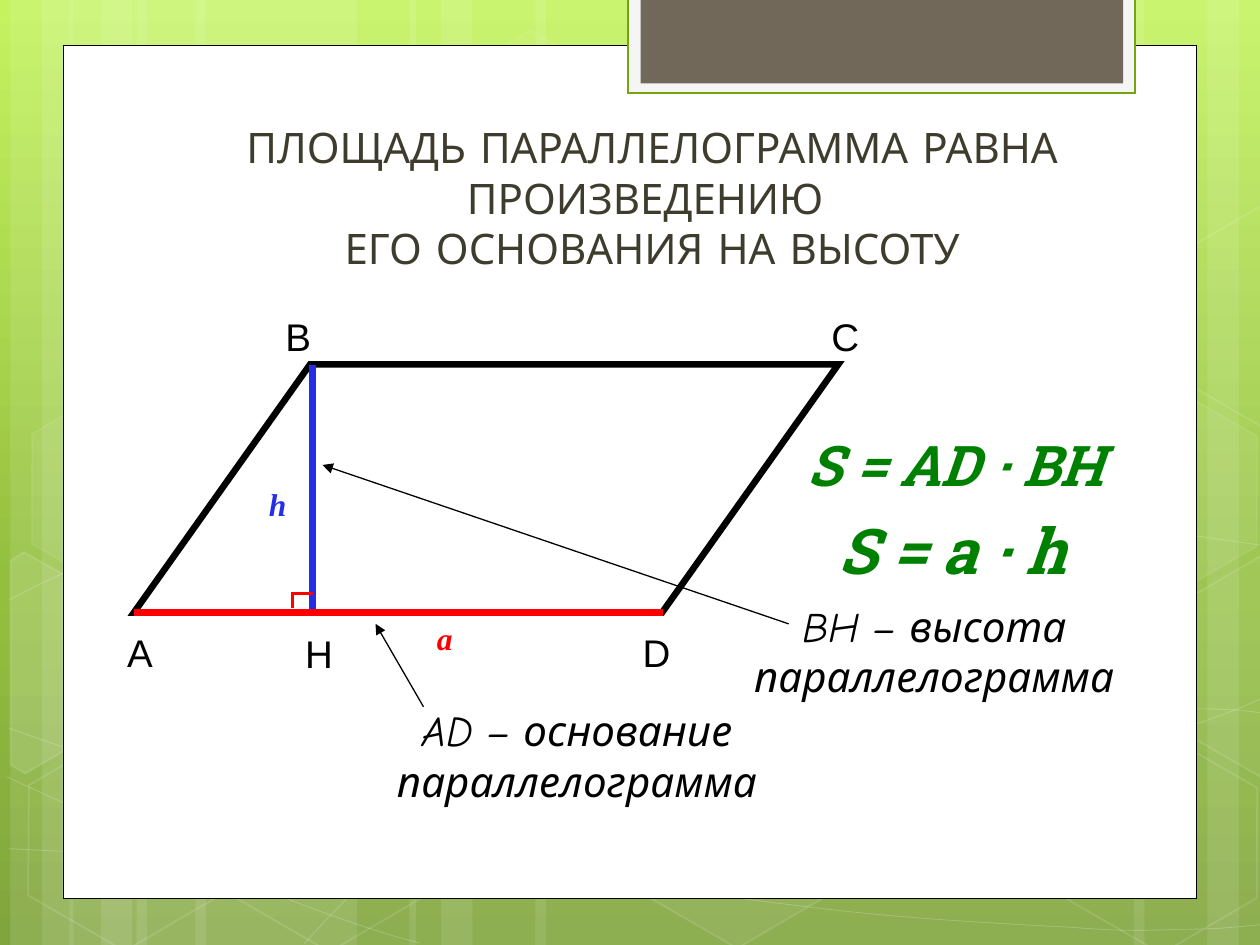
from copy import deepcopy
from math import cos, radians, sin
from lxml import etree
from pptx import Presentation
from pptx.dml.color import RGBColor
from pptx.enum.shapes import MSO_CONNECTOR, MSO_SHAPE
from pptx.enum.text import PP_ALIGN
from pptx.oxml.ns import qn
from pptx.util import Pt

RECT, HEX, SLANT = MSO_SHAPE.RECTANGLE, MSO_SHAPE.HEXAGON, MSO_SHAPE.PARALLELOGRAM
LINE = MSO_CONNECTOR.STRAIGHT
LEFT, MID = PP_ALIGN.LEFT, PP_ALIGN.CENTER
INK = {"white": "FFFFFF", "black": "000000", "red": "FF0000", "blue": "252EE7",
       "green": "008000", "title": "3E3D2D", "lime": "74A510", "tab": "F5F5F5",
       "brown": "71685A", "top": "C3F35F", "mid": "93BF3F", "low": "81A53E"}
STRIPES = [(78, 126), (6, 36), (24, 60), (111.6, 126), (39.6, 36), (57.6, 60),
           (528, 126), (690, 36), (648, 60), (306, 222), (234, 36), (252, 60)]
CURVES = [
    [(5, 485), (44, 487), (83, 489), (137, 488), (191, 487), (258, 486), (330, 479),
     (402, 472), (504, 458), (570, 444), (636, 431), (703, 409), (725, 397)],
    [(5, 343), (26, 332), (47, 321), (87, 310), (128, 300), (186, 284), (250, 279),
     (314, 274), (392, 273), (471, 279), (550, 284), (682, 307), (725, 312)],
    [(4, 444), (91, 484), (178, 523), (240, 539)],
    [(5, 416), (27, 424), (50, 432), (92, 444), (134, 454), (197, 472), (257, 485),
     (317, 497), (392, 510), (452, 517), (512, 525), (576, 528), (614, 530),
     (652, 533), (662, 531), (680, 531), (698, 531), (712, 529), (725, 528)],
    [(174, 539), (187, 525), (200, 510), (217, 498), (235, 485), (259, 470), (279, 460),
     (300, 450), (312, 446), (338, 438), (364, 431), (413, 421), (438, 416),
     (464, 411), (467, 411), (490, 410), (512, 408), (547, 405), (572, 405),
     (597, 405), (638, 405), (638, 405), (654, 405), (670, 405), (686, 405),
     (699, 405), (711, 406), (718, 407), (724, 408), (722, 407), (724, 408)]]
CELLS = [(240.5, 26, 4, 8), (358, 424, 6, 12), (8, 425.5, 0, 12), (10, 224.6, 7, 8),
         (125, 426, 0, 12), (542, 326, 10, 12), (600.5, 427, 0, 12), (600.5, 226, 7, 8)]
PARTS = [
    ([(6, 320.4), (13.7, 315.4), (69, 347), (68.4, 410.4), (14.4, 442), (6, 437)],
     (25.9, 385.2), 10),
    ([(666.7, 349), (720.7, 317.5), (726.5, 321), (726.5, 441.4), (721.4, 444.2),
      (666.7, 412.6)], (709.2, 374.4), 4),
    ([(666.7, 149), (720.7, 117.4), (727, 121), (726.5, 241.2), (721.4, 244),
      (666.7, 212.4)], (709.2, 173.5), 0)]


def fade(part, pct):
    """Make the colours in a part partly clear."""
    for tint in part.iter(qn("a:srgbClr")):
        etree.SubElement(tint, qn("a:alpha")).set("val", str(pct * 1000))


def style(shape, fill=None, line=None, width=1, alpha=100, edge=100):
    """Set the fill and outline of a shape."""
    shape.shadow.inherit = False
    if fill:
        shape.fill.solid()
        shape.fill.fore_color.rgb = RGBColor.from_string(INK[fill])
        if alpha < 100:
            fade(shape.fill._xPr.find(qn("a:solidFill")), alpha)
    else:
        shape.fill.background()
    if line:
        shape.line.color.rgb = RGBColor.from_string(INK[line])
        shape.line.width = Pt(width)
        etree.SubElement(shape.line._ln, qn("a:miter")).set("lim", "800000")
        if edge < 100:
            fade(shape.line._ln, edge)
    else:
        shape.line.fill.background()


def block(slide, kind, box, **look):
    """Add a preset shape."""
    shape = slide.shapes.add_shape(kind, *map(Pt, box))
    style(shape, **look)
    return shape


def trace(slide, dots, close=False, **look):
    """Add an outline through points."""
    spots = [(Pt(x), Pt(y)) for x, y in dots]
    pen = slide.shapes.build_freeform(*spots[0])
    pen.add_line_segments(spots[1:], close=close)
    shape = pen.convert_to_shape()
    style(shape, **look)
    return shape


def bend(shape):
    """Turn each three straight steps into one cubic curve."""
    steps = list(shape._element.iter(qn("a:lnTo")))
    for first, *rest in zip(steps[::3], steps[1::3], steps[2::3]):
        first.tag = qn("a:cubicBezTo")
        for step in rest:
            first.append(step[0])
            step.getparent().remove(step)


def turn(dots, hub, angle):
    """Return points turned back by an angle around a hub."""
    c, s = cos(radians(angle)), sin(radians(angle))
    return [(hub[0] + (x - hub[0]) * c + (y - hub[1]) * s,
             hub[1] - (x - hub[0]) * s + (y - hub[1]) * c) for x, y in dots]


def rule(slide, start, end, color="black", width=0.75, arrow=False):
    """Add a straight line, with an arrowhead if asked."""
    link = slide.shapes.add_connector(LINE, *map(Pt, (*start, *end)))
    link.line.color.rgb = RGBColor.from_string(INK[color])
    link.line.width = Pt(width)
    if arrow:
        etree.SubElement(link.line._ln, qn("a:tailEnd")).set("type", "triangle")
    etree.SubElement(link._element.spPr, qn("a:effectLst"))


def write(slide, text, box, size=24, font="Comic Neue", color="black", align=LEFT,
          bold=False, slant=False):
    """Add a text box."""
    frame = slide.shapes.add_textbox(*map(Pt, box)).text_frame
    frame.word_wrap = True
    frame.text = text
    for para in frame.paragraphs:
        para.alignment = align
        for run in para.runs:
            face = run.font
            face.size, face.name, face.bold, face.italic = Pt(size), font, bold, slant
            face.color.rgb = RGBColor.from_string(INK[color])


def ground(slide):
    """Paint the gradient background."""
    fill = slide.background.fill
    fill.gradient()
    fill.gradient_angle = 270
    stops = next(slide.element.iter(qn("a:gsLst")))
    stops.insert(1, deepcopy(stops[0]))
    for stop, name, place in zip(fill.gradient_stops, ("top", "mid", "low"), (0, 0.62, 1)):
        stop.color.rgb = RGBColor.from_string(INK[name])
        stop.position = place


def decor(slide, left, top, high):
    """Draw the stripes, curves and hexagons."""
    for x, wide in STRIPES:
        block(slide, RECT, (left + x, top, wide, high), fill="white", alpha=10)
    for knots in CURVES:
        bend(trace(slide, [(left + x, top + y) for x, y in knots], line="white",
                   width=0.5, edge=20))
    for x, y, alpha, edge in CELLS:
        cell = block(slide, HEX, (left + x, top + y, 126, 109.4), line="white",
                     fill="white" if alpha else None, alpha=alpha, edge=edge)
        cell.adjustments[0] = 0.285
        cell.rotation = 30
    for dots, hub, alpha in PARTS:
        spots = [(left + x, top + y) for x, y in turn(dots, hub, 30)]
        part = trace(slide, spots, close=True, line="white",
                     fill="white" if alpha else None, alpha=alpha, edge=12)
        part.rotation = 30


def card(slide, left, top, wide, high):
    """Draw the white sheet and its tab."""
    block(slide, RECT, (left, top, wide, high), fill="white", line="black", width=0.5)
    block(slide, RECT, (left + 323, top - 27.4, 289.8, 54.7), fill="tab", line="lime",
          width=1.25)
    block(slide, RECT, (left + 330.1, top - 27.4, 275.8, 49), fill="brown")


def figure(slide, left, top, wide, high):
    """Draw the parallelogram with its height, base and labels."""
    base, foot = top + high, left + 102.2
    body = block(slide, SLANT, (left, top, wide, high), line="black", width=3.75)
    body.adjustments[0] = 0.71
    for name, x, y in (("B", 79.5, -33), ("А", -11, 147.8), ("D", 283.7, 147.8),
                       ("C", 391.5, -32.8), ("H", 90.8, 148)):
        write(slide, name, (left + x, top + y, 39.6, 33.8), size=22, font="Arial")
    rule(slide, (foot, top), (foot, base), "blue", 3.75)
    notch = [(foot - 11.5, base - 2.4), (foot - 11.5, base - 10.9), (foot, base - 10.9)]
    mark = trace(slide, turn(notch, (foot - 5.75, base - 6.65), 270), line="red", width=1.5)
    mark.rotation = 270
    rule(slide, (left + 165.5, base + 53.8), (left + 138.1, base + 6.4), arrow=True)
    rule(slide, (left, base), (left + 302.2, base), "red", 3.75)
    rule(slide, (left + 374.2, base + 6.4), (left + 107.8, top + 57.4), arrow=True)
    for text, x, y, span in (("BH – высота", 331, 131, 252.7),
                             ("AD – основание", 120.8, 190.8, 265)):
        write(slide, text + "\nпараллелограмма", (left + x, top + y, span, 65.5),
              align=MID, slant=True)
    for text, x, y, color in (("a", 166.1, 142.1, "red"), ("h", 70, 65.3, "blue")):
        write(slide, text, (left + x, top + y, 75.6, 29.5), size=18,
              font="Times New Roman", color=color, bold=True, slant=True)


def sums(slide, left, top):
    """Write the two area formulas."""
    for text, x, y, span, high, size in (("S = AD · BH", 0, 0, 249, 46, 32),
                                         ("S = a · h", 17.6, 46, 175.7, 51, 36)):
        write(slide, text, (left + x, top + y, span, high), size=size,
              font="Roboto Slab", color="green", bold=True, slant=True)


def main():
    """Build and save the slide."""
    deck = Presentation()
    deck.slide_width, deck.slide_height = Pt(720), Pt(540)
    slide = deck.slides.add_slide(deck.slide_layouts[6])
    ground(slide)
    decor(slide, 0, 0, 540)
    card(slide, 36, 26, 648, 487.2)
    figure(slide, 76.5, 208.3, 402.5, 141.8)
    write(slide, "ПЛОЩАДЬ ПАРАЛЛЕЛОГРАММА РАВНА ПРОИЗВЕДЕНИЮ \vЕГО ОСНОВАНИЯ НА ВЫСОТУ",
          (85, 66, 575.3, 94.3), color="title", align=MID)
    sums(slide, 454.3, 242.6)
    deck.save("out.pptx")


if __name__ == "__main__":
    main()
